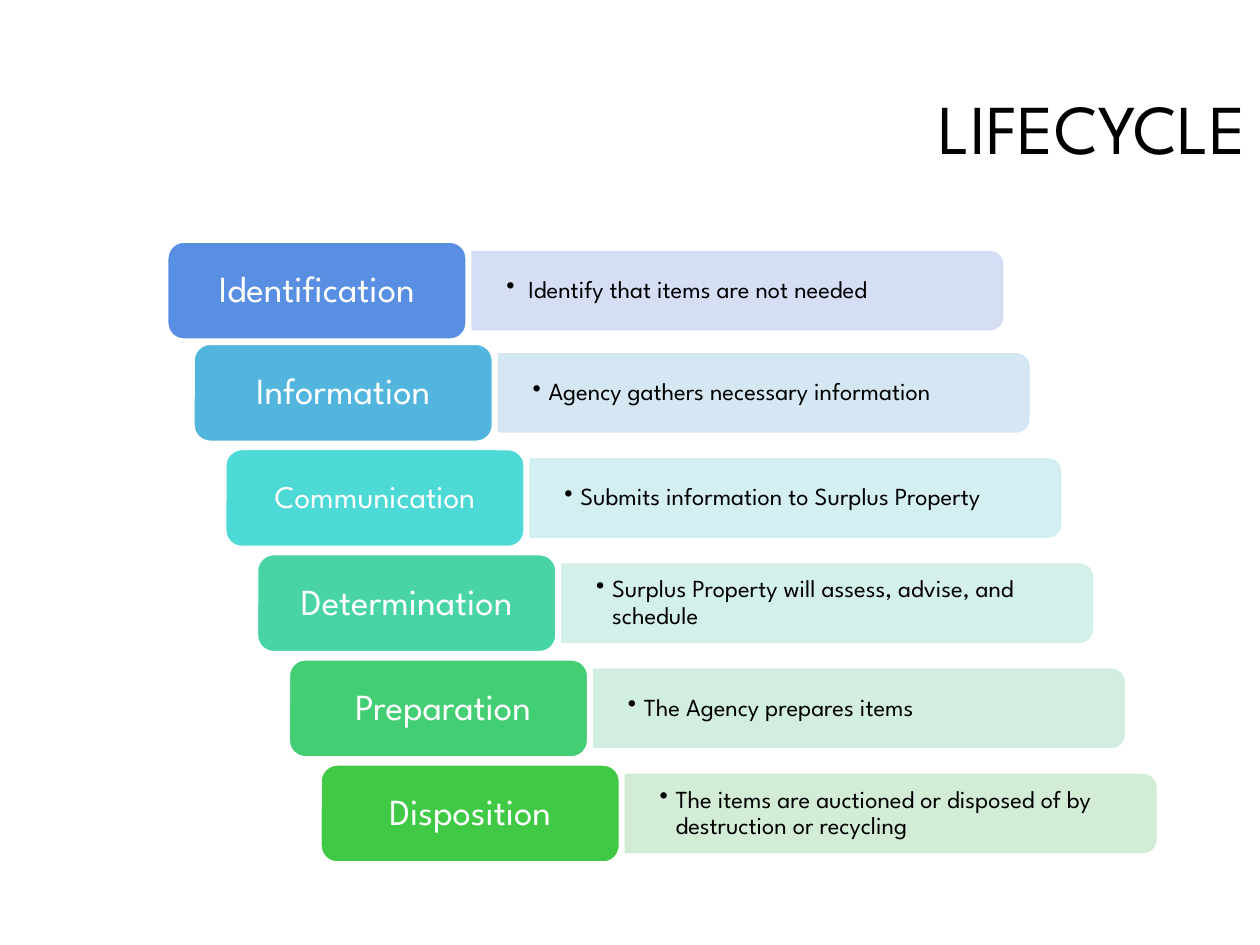
from pptx import Presentation
from pptx import util as u
from pptx.dml.color import RGBColor
from pptx.enum import shapes, text
from pptx.oxml.ns import qn
from lxml import etree

COLORS = {"text": "000000", "label_text": "FFFFFF", "outline": "FFFFFF"}

# label, label size, description, label fill, bar fill
STEPS = [
    ("Identification", 21, " Identify that items are not needed", "588FE2", "D1DBF4"),
    ("Information", 21, "Agency gathers necessary information", "52B5DE", "D0E5F2"),
    ("Communication", 18, "Submits information to Surplus Property", "4DD9D5", "D0EEF1"),
    ("Determination", 21, "Surplus Property will assess, advise, and schedule",
     "48D4A5", "CFEFE8"),
    (" Preparation", 21, "The Agency prepares items", "44CE74", "CEEDDD"),
    ("Disposition", 21, "The items are auctioned or disposed of by destruction or recycling",
     "3FC944", "CEEBD2"),
]

LABEL_W, LABEL_H = 6.02, 1.96
BAR_W, BAR_H = 10.69, 1.57
BAR_GAP = 0.12


def write(tf, content, size=14, color="text", align=text.PP_ALIGN.LEFT,
          inset=(0.25, 0.13), bullet=False):
    """Fill a text frame with one vertically centred paragraph; insets are in cm."""
    tf.word_wrap = True
    tf.vertical_anchor = text.MSO_ANCHOR.MIDDLE
    tf.margin_left = tf.margin_right = u.Cm(inset[0])
    tf.margin_top = tf.margin_bottom = u.Cm(inset[1])
    p = tf.paragraphs[0]
    p.alignment = align
    p.line_spacing = 0.9
    if bullet:
        p.level = 1
        pPr = p._p.get_or_add_pPr()
        pPr.set("marL", str(u.Cm(0.32)))
        pPr.set("indent", str(u.Cm(-0.32)))
        etree.SubElement(pPr, qn("a:buChar")).set("char", "•")
    r = p.add_run()
    r.text = content
    r.font.name = "League Spartan"
    r.font.size = u.Pt(size)
    r.font.color.rgb = RGBColor.from_string(COLORS[color])


class Deck:
    def __init__(self):
        self.prs = Presentation()
        self.prs.slide_width, self.prs.slide_height = u.Cm(25.4), u.Cm(19.05)
        self.s = self.prs.slides.add_slide(self.prs.slide_layouts[6])

    def text(self, parent, x, y, w, h, content, **fmt):
        box = parent.shapes.add_textbox(u.Cm(x), u.Cm(y), u.Cm(w), u.Cm(h))
        write(box.text_frame, content, **fmt)

    def shape(self, parent, kind, x, y, w, h, fill, line):
        sp = parent.shapes.add_shape(kind, u.Cm(x), u.Cm(y), u.Cm(w), u.Cm(h))
        sp.shadow.inherit = False
        sp.fill.solid()
        sp.fill.fore_color.rgb = RGBColor.from_string(fill)
        sp.line.color.rgb = RGBColor.from_string(line)
        sp.line.width = u.Pt(1)
        return sp

    def label(self, grp, x, y, content, size, fill):
        self.shape(grp, shapes.MSO_SHAPE.ROUNDED_RECTANGLE, x, y, LABEL_W, LABEL_H,
                   fill, COLORS["outline"])
        self.text(grp, x + 0.12, y + 0.1, LABEL_W - 0.24, LABEL_H - 0.2, content,
                  size=size, color="label_text", align=text.PP_ALIGN.CENTER,
                  inset=(0.23, 0.1))

    def bar(self, grp, x, y, content, fill):
        """Bar rounded at its right end: a turned top-rounded rectangle."""
        turn = (BAR_W - BAR_H) / 2
        sp = self.shape(grp, shapes.MSO_SHAPE.ROUND_2_SAME_RECTANGLE,
                        x + turn, y - turn, BAR_H, BAR_W, fill, fill)
        sp.rotation = 90
        for clr in sp._element.spPr.iter(qn("a:srgbClr")):
            etree.SubElement(clr, qn("a:alpha")).set("val", "90000")
        self.text(grp, x, y + 0.08, BAR_W - 0.1, BAR_H - 0.16, content,
                  inset=(0.69, 0.36), bullet=True)

    def step(self, x, y, name, size, detail, fill, bar_fill):
        grp = self.s.shapes.add_group_shape()
        self.label(grp, x, y, name, size, fill)
        self.bar(grp, x + LABEL_W + BAR_GAP, y + (LABEL_H - BAR_H) / 2, detail, bar_fill)


def main():
    deck = Deck()
    # The first step sits slightly outside the even staircase of the others
    places = [(3.38, 4.88)] + [(3.91 + 0.64 * i, 6.94 + 2.12 * i)
                               for i in range(len(STEPS) - 1)]
    for (x, y), step in zip(places, STEPS):
        deck.step(x, y, *step)
    deck.text(deck.s, 7.67, 0.86, 17.7, 3.58, "LIFECYCLE", size=40,
              align=text.PP_ALIGN.RIGHT)
    deck.prs.save("out.pptx")


if __name__ == "__main__":
    main()
